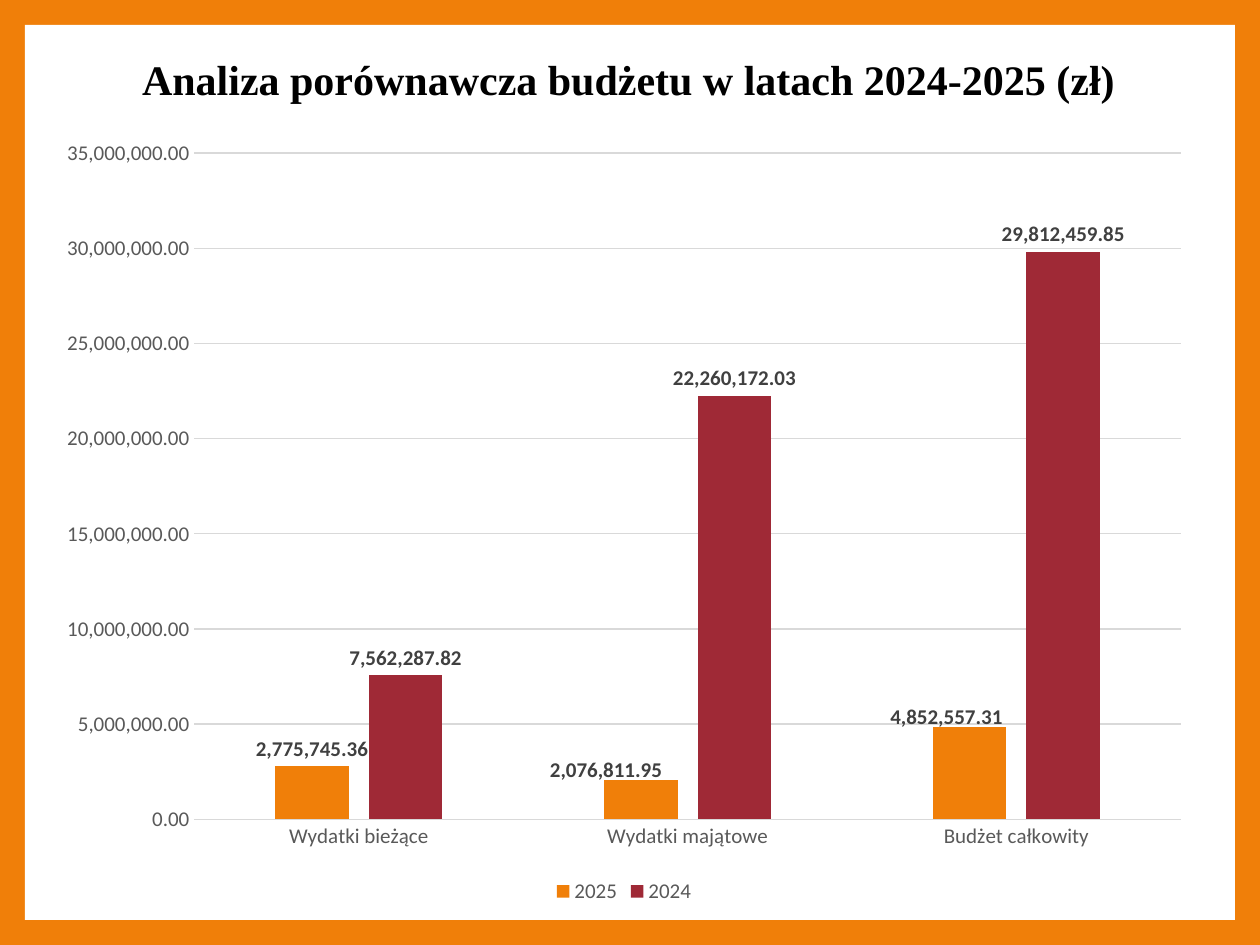
from lxml import etree
from pptx import Presentation
from pptx import util as u
from pptx.chart.data import CategoryChartData
from pptx.dml.color import RGBColor
from pptx.enum import chart as ch, shapes, text
from pptx.oxml.ns import qn

COLORS = {"orange": "F07F09", "red": "9F2936", "white": "FFFFFF", "black": "000000",
          "grid": "D9D9D9", "axis": "595959", "label": "404040"}
NUMBER = "#,##0.00"
SCALE = u.Inches(1) / 126


def px(*lengths):
    return [u.Emu(round(n * SCALE)) for n in lengths]


def style(font, color, **values):
    for name, value in values.items():
        setattr(font, name, value)
    font.color.rgb = RGBColor.from_string(COLORS[color])


deck = Presentation()
deck.slide_width, deck.slide_height = px(1260, 945)
slide = deck.slides.add_slide(deck.slide_layouts[6])
slide.background.fill.solid()
slide.background.fill.fore_color.rgb = RGBColor.from_string(COLORS["orange"])

panel = slide.shapes.add_shape(shapes.MSO_SHAPE.RECTANGLE, *px(25, 25, 1210, 895))
panel.shadow.inherit = False
panel.fill.solid()
panel.fill.fore_color.rgb = RGBColor.from_string(COLORS["white"])
panel.line.fill.background()

heading = slide.shapes.add_textbox(*px(118, 37, 1021, 89)).text_frame
heading.word_wrap = True
heading.vertical_anchor = text.MSO_ANCHOR.MIDDLE
title = heading.paragraphs[0]
title.alignment = text.PP_ALIGN.CENTER
title.line_spacing = 0.9
title_run = title.add_run()
title_run.text = "Analiza porównawcza budżetu w latach 2024-2025 (zł)"
style(title_run.font, "black", name="Times New Roman", size=u.Pt(24), bold=True)

budget = CategoryChartData(number_format=NUMBER)
budget.categories = ["Wydatki bieżące", "Wydatki majątowe", "Budżet całkowity"]
budget.add_series("2025", [2775745.36, 2076811.95, 4852557.31])
budget.add_series("2024", [7562287.82, 22260172.03, 29812459.85])
chart = slide.shapes.add_chart(
    ch.XL_CHART_TYPE.COLUMN_CLUSTERED, *px(44, 125, 1160, 784), budget).chart
style(chart.font, "black", name="Calibri", size=u.Pt(10))
chart.has_title = False
chart.has_legend = True
chart.legend.position = ch.XL_LEGEND_POSITION.BOTTOM
chart.legend.include_in_layout = False

categories, amounts = chart.category_axis, chart.value_axis
for part in (categories.tick_labels, amounts.tick_labels, chart.legend):
    style(part.font, "axis", name="Calibri", size=u.Pt(12))
for axis in (categories, amounts):
    axis.major_tick_mark = axis.minor_tick_mark = ch.XL_TICK_MARK.NONE
for line in (categories.format.line, amounts.major_gridlines.format.line):
    line.color.rgb = RGBColor.from_string(COLORS["grid"])
    line.width = u.Pt(0.75)
amounts.format.line.fill.background()
amounts.minimum_scale, amounts.maximum_scale, amounts.major_unit = 0, 35000000, 5000000
amounts.tick_labels.number_format = NUMBER
amounts.tick_labels.number_format_is_linked = False

plot = chart.plots[0]
plot.vary_by_categories = False
plot.gap_width, plot.overlap = 219, -27
label_format = {"show_value": True, "number_format": NUMBER, "number_format_is_linked": False,
                "position": ch.XL_LABEL_POSITION.OUTSIDE_END}
for year, color in zip(plot.series, ("orange", "red")):
    year.format.fill.solid()
    year.format.fill.fore_color.rgb = RGBColor.from_string(COLORS[color])
    year.invert_if_negative = False
    for name, value in label_format.items():
        setattr(year.data_labels, name, value)
    style(year.data_labels.font, "label", name="Calibri", size=u.Pt(12), bold=True)

current = plot.series[0]
for index, shift in {1: (-0.03, 0.01), 2: (-0.02, 0.01)}.items():
    moved = current.points[index].data_label
    style(moved.font, "label", name="Calibri", size=u.Pt(12), bold=True)
    moved.position = ch.XL_LABEL_POSITION.OUTSIDE_END
    entry = current.data_labels._element.findall(qn("c:dLbl"))[-1]
    layout = etree.Element(qn("c:layout"))
    manual = etree.SubElement(layout, qn("c:manualLayout"))
    for direction, offset in zip("xy", shift):
        etree.SubElement(manual, qn(f"c:{direction}")).set("val", str(offset))
    entry.find(qn("c:idx")).addnext(layout)

deck.save("out.pptx")
